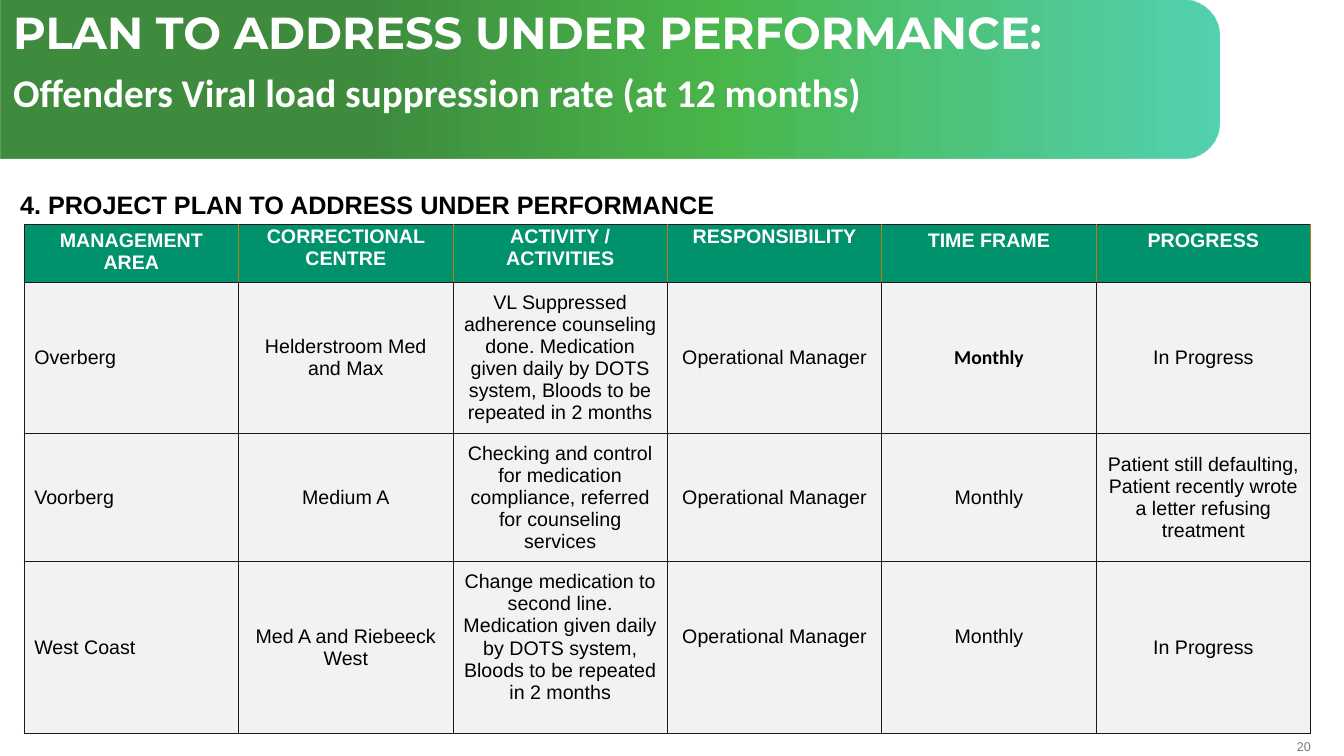
import pptx
import pptx.dml.color
import pptx.enum.shapes
import pptx.enum.text
import pptx.oxml
import pptx.oxml.ns
import pptx.util

Inches = pptx.util.Inches
ALIGN = pptx.enum.text.PP_ALIGN
ANCHOR = pptx.enum.text.MSO_ANCHOR

DARK, ORANGE = "1E1918", "BF7B17"
BANNER_STOPS = [(30, "006600", 75), (59, "009900", 71), (100, "00BC8D", 67)]
HEADINGS = ["MANAGEMENT AREA", "CORRECTIONAL CENTRE", "ACTIVITY / ACTIVITIES",
            "RESPONSIBILITY", "TIME FRAME", "PROGRESS"]
PLANS = [
    ["Overberg", "Helderstroom Med and Max",
     "VL Suppressed adherence counseling done. Medication given daily by DOTS "
     "system, Bloods to be repeated in 2 months",
     "Operational Manager", "Monthly", "In Progress"],
    ["Voorberg", "Medium A",
     "Checking and control for medication compliance, referred for counseling services",
     "Operational Manager", "Monthly",
     "Patient still defaulting, Patient recently wrote a letter refusing treatment"],
    ["West Coast", "Med A and Riebeeck West",
     "Change medication to second line. Medication given daily by DOTS system, "
     "Bloods to be repeated in 2 months",
     "Operational Manager", "Monthly", "In Progress"],
]
ROW_HEIGHTS = [0.57, 1.5, 1.27, 1.68]


def rgb(value):
    """Turn a hex string into a colour."""
    return pptx.dml.color.RGBColor.from_string(value)


def apply(target, values):
    """Set each named attribute of the target."""
    for attribute, value in values.items():
        setattr(target, attribute, value)


def write(paragraph, text, size, color, font="Arial", bold=False, **layout):
    """Fill a paragraph with one formatted run."""
    apply(paragraph, layout)
    run = paragraph.add_run()
    run.text = text
    apply(run.font, {"name": font, "size": pptx.util.Pt(size), "bold": bold})
    run.font.color.rgb = rgb(color)


def margins(horizontal, top, bottom):
    """Give the four inner margins as attribute values."""
    return {"margin_left": Inches(horizontal), "margin_right": Inches(horizontal),
            "margin_top": Inches(top), "margin_bottom": Inches(bottom)}


def add_banner(slide, left, top, width, height):
    """Draw the gradient band with its right corners rounded."""
    band = slide.shapes.add_shape(
        pptx.enum.shapes.MSO_SHAPE.ROUND_2_SAME_RECTANGLE,
        Inches(left + (width - height) / 2), Inches(top + (height - width) / 2),
        Inches(height), Inches(width))
    band.rotation = 90
    band.adjustments[0] = 0.233
    band.adjustments[1] = 0
    band.shadow.inherit = False
    band.line.fill.background()
    stops = "".join(
        f'<a:gs pos="{place * 1000}"><a:srgbClr val="{color}">'
        f'<a:alpha val="{opacity * 1000}"/></a:srgbClr></a:gs>'
        for place, color, opacity in BANNER_STOPS)
    gradient = pptx.oxml.parse_xml(
        f'<a:gradFill {pptx.oxml.ns.nsdecls("a")} rotWithShape="1"><a:gsLst>{stops}</a:gsLst>'
        '<a:lin ang="16200000" scaled="0"/></a:gradFill>')
    band.fill.background()
    no_fill = band.element.spPr.find(pptx.oxml.ns.qn("a:noFill"))
    band.element.spPr.replace(no_fill, gradient)


def add_title(slide, left, top, width, height):
    """Place the two-line title over the banner."""
    title = slide.shapes.title
    apply(title, {"left": Inches(left), "top": Inches(top),
                  "width": Inches(width), "height": Inches(height)})
    frame = title.text_frame
    apply(frame, {"word_wrap": True, "vertical_anchor": ANCHOR.TOP,
                  "auto_size": pptx.enum.text.MSO_AUTO_SIZE.NONE,
                  **margins(0.1, 0.05, 0.05)})
    common = {"color": "FFFFFF", "bold": True, "alignment": ALIGN.LEFT,
              "space_before": pptx.util.Pt(0), "space_after": pptx.util.Pt(6)}
    write(frame.paragraphs[0], "PLAN TO ADDRESS UNDER PERFORMANCE:", 32,
          font="Montserrat", line_spacing=0.9, **common)
    write(frame.add_paragraph(), "Offenders Viral load suppression rate (at 12 months)", 28,
          font="Calibri", line_spacing=1.0, **common)
    slide.shapes._spTree.append(title.element)


def add_label(slide, left, top, width, height, text, inset, **style):
    """Place a single line of text."""
    frame = slide.shapes.add_textbox(
        Inches(left), Inches(top), Inches(width), Inches(height)).text_frame
    apply(frame, {"word_wrap": True, **margins(inset, inset / 2, inset / 2)})
    write(frame.paragraphs[0], text, **style)


def style_cell(cell, fill, borders):
    """Give a cell its fill and its four border colours."""
    properties = cell._tc.get_or_add_tcPr()
    for side, color in zip("LRTB", borders):
        properties.append(pptx.oxml.parse_xml(
            f'<a:ln{side} {pptx.oxml.ns.nsdecls("a")} w="6350"><a:solidFill>'
            f'<a:srgbClr val="{color}"/></a:solidFill></a:ln{side}>'))
    cell.fill.solid()
    cell.fill.fore_color.rgb = rgb(fill)


def fill_heading(cell, text, column):
    """Write one column heading."""
    tight = 1 <= column <= 3
    apply(cell, margins(0.01, 0.01, 0) if tight else margins(0.1, 0.05, 0.05))
    cell.vertical_anchor = ANCHOR.TOP
    style_cell(cell, "00926C", [ORANGE if column else DARK, ORANGE, DARK, DARK])
    write(cell.text_frame.paragraphs[0], text, 14, "FFFFFF", bold=True, alignment=ALIGN.CENTER)


def fill_plan(cell, text, row, column):
    """Write one entry of the project plan."""
    raised = row == len(PLANS) and 2 <= column <= 4
    apply(cell, margins(0.1, 0.05, 0.25 if raised else 0.05))
    cell.vertical_anchor = ANCHOR.MIDDLE
    style_cell(cell, "F2F2F2", [DARK] * 4)
    strong = row == 1 and HEADINGS[column] == "TIME FRAME"
    write(cell.text_frame.paragraphs[0], text, 14, "000000",
          font="Calibri" if strong else "Arial", bold=strong,
          alignment=ALIGN.CENTER if column else ALIGN.LEFT)


def add_plan_table(slide, left, top, width):
    """Build the project plan with equal columns."""
    table = slide.shapes.add_table(
        len(ROW_HEIGHTS), len(HEADINGS), Inches(left), Inches(top),
        Inches(width), Inches(sum(ROW_HEIGHTS))).table
    apply(table, {"first_row": False, "horz_banding": False})
    for row, height in zip(table.rows, ROW_HEIGHTS):
        row.height = Inches(height)
    for column, heading in enumerate(HEADINGS):
        fill_heading(table.cell(0, column), heading, column)
    for row, plan in enumerate(PLANS, 1):
        for column, entry in enumerate(plan):
            fill_plan(table.cell(row, column), entry, row, column)


def main():
    """Build and save the slide."""
    deck = pptx.Presentation()
    apply(deck, {"slide_width": Inches(13.33), "slide_height": Inches(7.5)})
    slide = deck.slides.add_slide(deck.slide_layouts[5])
    add_label(slide, 12.61, 7.33, 0.39, 0.15, "20", 0, size=9, color="77787B",
              alignment=ALIGN.RIGHT)
    add_banner(slide, 0.01, 0, 12.08, 1.57)
    add_label(slide, 0.1, 1.83, 9.65, 0.4, "4. PROJECT PLAN TO ADDRESS UNDER PERFORMANCE",
              0.1, size=18, color="000000", bold=True)
    add_plan_table(slide, 0.24, 2.23, 12.76)
    add_title(slide, 0.03, 0.06, 11.98, 0.57)
    deck.save("out.pptx")


if __name__ == "__main__":
    main()
